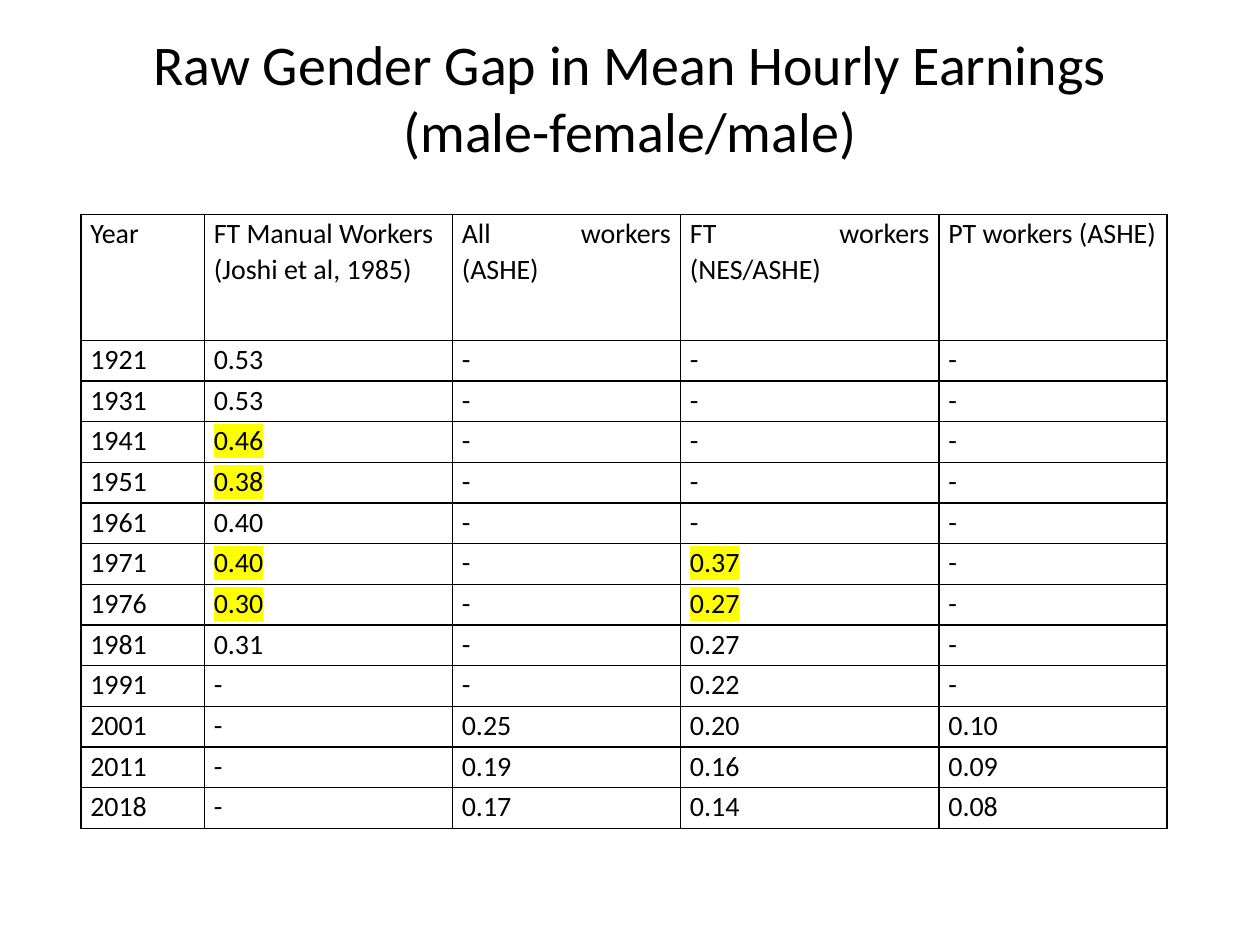
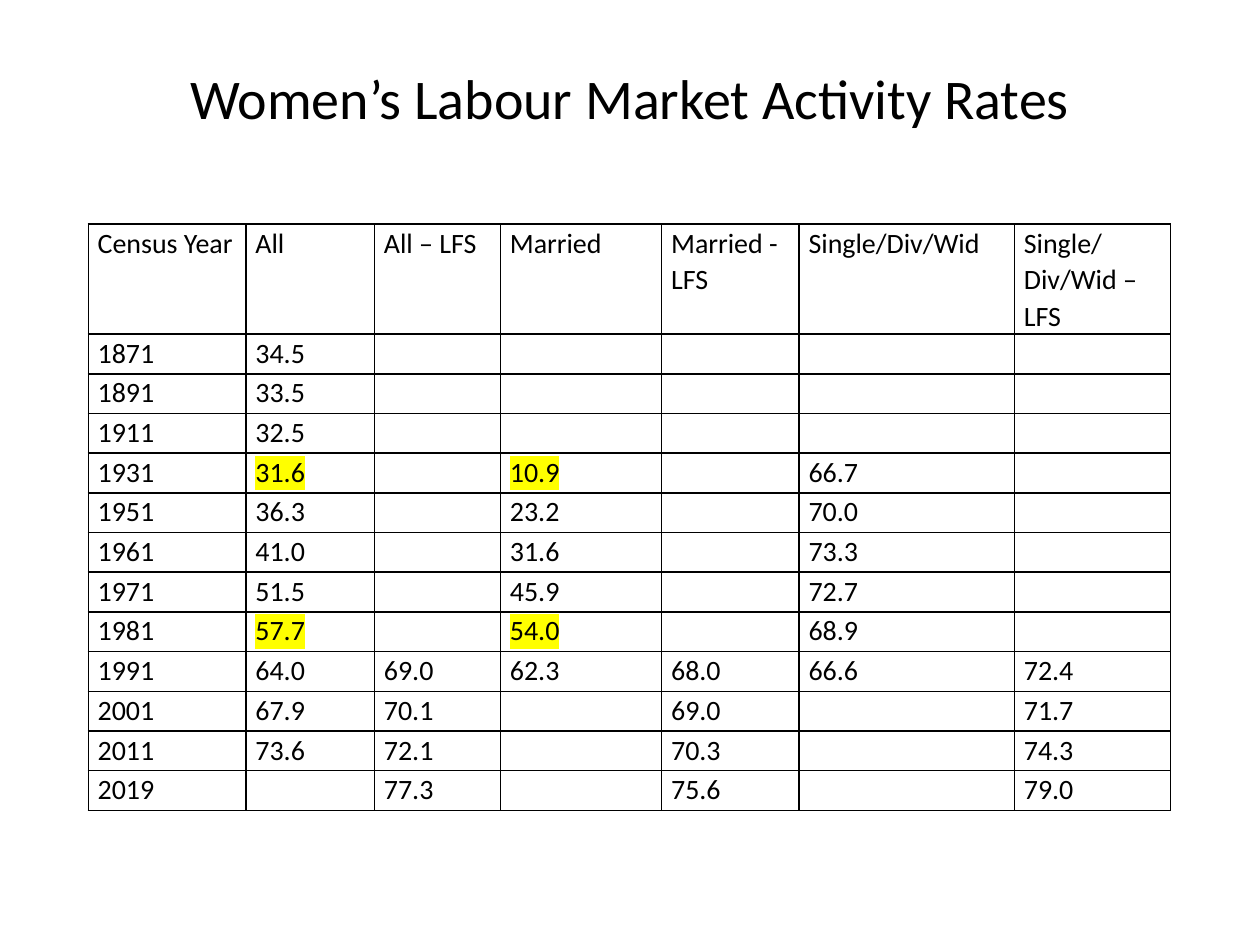
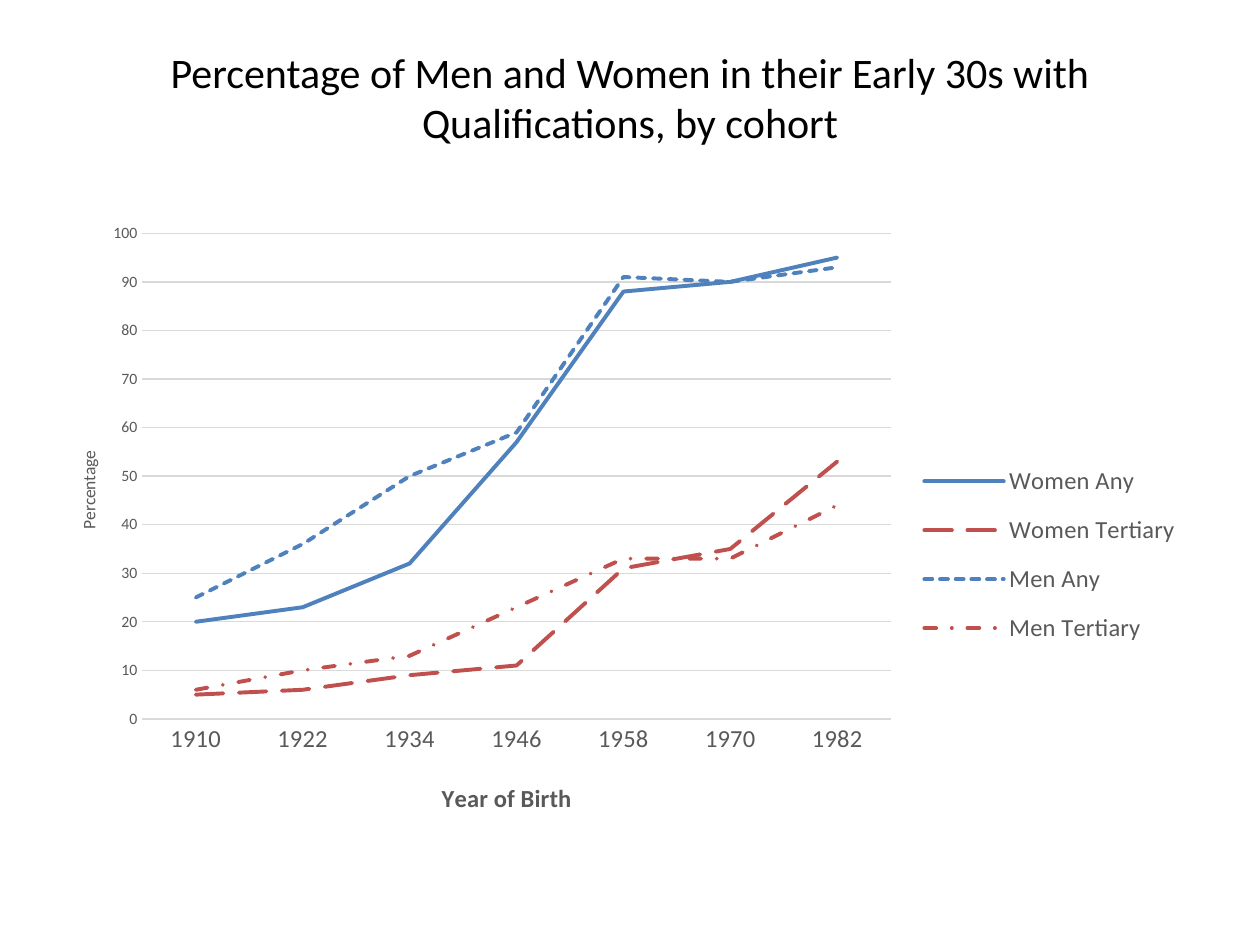
import lxml.etree
import pptx
import pptx.chart.data
import pptx.dml.color
import pptx.enum.chart
import pptx.enum.dml
import pptx.enum.text
import pptx.oxml.ns
import pptx.util

Cm = pptx.util.Cm
Pt = pptx.util.Pt
qn = pptx.oxml.ns.qn
ALIGN = pptx.enum.text.PP_ALIGN
DASH = pptx.enum.dml.MSO_LINE

FONT = "Calibri"
COLOURS = {
    "text": "000000",
    "border": "000000",
    "highlight": "FFFF00",
    "chart text": "595959",
    "grid": "D9D9D9",
    "any": "4F81BD",
    "tertiary": "C0504D",
}
TITLE_BOX = (1.27, 0.53, 22.86, 2.84)

EARNINGS_GAP = [
    ["Year", "FT Manual Workers\n(Joshi et al, 1985)", "All workers\v(ASHE)",
     "FT workers (NES/ASHE)", "PT workers (ASHE)"],
    ["1921", "0.53", "-", "-", "-"],
    ["1931", "0.53", "-", "-", "-"],
    ["1941", "0.46", "-", "-", "-"],
    ["1951", "0.38", "-", "-", "-"],
    ["1961", "0.40", "-", "-", "-"],
    ["1971", "0.40", "-", "0.37", "-"],
    ["1976", "0.30", "-", "0.27", "-"],
    ["1981", "0.31", "-", "0.27", "-"],
    ["1991", "-", "-", "0.22", "-"],
    ["2001", "-", "0.25", "0.20", "0.10"],
    ["2011", "-", "0.19", "0.16", "0.09"],
    ["2018", "-", "0.17", "0.14", "0.08"],
]
# Highlighted cells are given as (year, column)
EARNINGS_HIGHLIGHTS = {("1941", 1), ("1951", 1), ("1971", 1), ("1976", 1),
                       ("1971", 3), ("1976", 3)}

ACTIVITY_RATES = [
    ["Census Year", "All", "All – LFS", "Married", "Married - LFS",
     "Single/Div/Wid", "Single/Div/Wid – LFS"],
    ["1871", "34.5", "", "", "", "", ""],
    ["1891", "33.5", "", "", "", "", ""],
    ["1911", "32.5", "", "", "", "", ""],
    ["1931", "31.6", "", "10.9", "", "66.7", ""],
    ["1951", "36.3", "", "23.2", "", "70.0", ""],
    ["1961", "41.0", "", "31.6", "", "73.3", ""],
    ["1971", "51.5", "", "45.9", "", "72.7", ""],
    ["1981", "57.7", "", "54.0", "", "68.9", ""],
    ["1991", "64.0", "69.0", "62.3", "68.0", "66.6", "72.4"],
    ["2001", "67.9", "70.1", "", "69.0", "", "71.7"],
    ["2011", "73.6", "72.1", "", "70.3", "", "74.3"],
    ["2019", "", "77.3", "", "75.6", "", "79.0"],
]
ACTIVITY_HIGHLIGHTS = {("1931", 1), ("1931", 3), ("1981", 1), ("1981", 3)}

BIRTH_YEARS = ["1910", "1922", "1934", "1946", "1958", "1970", "1982"]
QUALIFICATIONS = [
    ("Women Any", [20, 23, 32, 57, 88, 90, 95], "any", DASH.SOLID),
    ("Women Tertiary", [5, 6, 9, 11, 31, 35, 53], "tertiary", DASH.LONG_DASH),
    ("Men Any", [25, 36, 50, 59, 91, 90, 93], "any", DASH.SQUARE_DOT),
    ("Men Tertiary", [6, 10, 13, 23, 33, 33, 44], "tertiary", DASH.DASH_DOT),
]


def colour(key):
    return pptx.dml.color.RGBColor.from_string(COLOURS[key])


def style_font(font, size, key="text", bold=False):
    font.name = FONT
    font.size = Pt(size)
    font.bold = bold
    font.color.rgb = colour(key)


def add_run(paragraph, text, size, key="text", bold=False):
    run = paragraph.add_run()
    run.text = text
    style_font(run.font, size, key, bold)
    return run


def add_titled_slide(deck, heading, size):
    slide = deck.slides.add_slide(deck.slide_layouts[5])
    title = slide.shapes.title
    title.left, title.top, title.width, title.height = map(Cm, TITLE_BOX)
    title.text_frame.vertical_anchor = pptx.enum.text.MSO_ANCHOR.MIDDLE
    paragraph = title.text_frame.paragraphs[0]
    paragraph.alignment = ALIGN.CENTER
    add_run(paragraph, heading, size)
    return slide


# Tables
def highlight(run):
    fill = run.font._element.find(qn("a:solidFill"))
    mark = lxml.etree.Element(qn("a:highlight"))
    lxml.etree.SubElement(mark, qn("a:srgbClr"), val=COLOURS["highlight"])
    fill.addnext(mark)


def frame_cell(cell):
    properties = cell._tc.get_or_add_tcPr()
    for side in ("a:lnL", "a:lnR", "a:lnT", "a:lnB"):
        line = lxml.etree.SubElement(properties, qn(side), w=str(Pt(1)))
        fill = lxml.etree.SubElement(line, qn("a:solidFill"))
        lxml.etree.SubElement(fill, qn("a:srgbClr"), val=COLOURS["border"])
    cell.fill.background()
    cell.margin_left = cell.margin_right = Cm(0.19)
    cell.margin_top = cell.margin_bottom = 0


def write_cell(cell, text, align, marked):
    for index, block in enumerate(text.split("\n")):
        frame = cell.text_frame
        paragraph = frame.add_paragraph() if index else frame.paragraphs[0]
        paragraph.alignment = align
        paragraph.line_spacing = 1.07
        for position, line in enumerate(block.split("\v")):
            if position:
                paragraph.add_line_break()
            run = add_run(paragraph, line, 16)
            if marked:
                highlight(run)


def add_data_table(slide, left, top, widths, header_height, row_height,
                   rows, highlights, align):
    heights = [header_height] + [row_height] * (len(rows) - 1)
    table = slide.shapes.add_table(
        len(rows), len(widths), Cm(left), Cm(top),
        Cm(sum(widths)), Cm(sum(heights))).table
    table.first_row = table.horz_banding = False
    for column, width in zip(table.columns, widths):
        column.width = Cm(width)
    for row, height, values in zip(table.rows, heights, rows):
        row.height = Cm(height)
        for index, (cell, text) in enumerate(zip(row.cells, values)):
            frame_cell(cell)
            if text:
                write_cell(cell, text, align, (values[0], index) in highlights)


# Chart
def place(element, x, y, w=None, h=None, inner=False):
    """Set the place of a chart part as fractions of the chart."""
    layout = element.find(qn("c:layout"))
    if layout is None:
        layout = lxml.etree.Element(qn("c:layout"))
        overlay = element.find(qn("c:overlay"))
        if overlay is None:
            element.insert(0, layout)
        else:
            overlay.addprevious(layout)
    for child in list(layout):
        layout.remove(child)
    manual = lxml.etree.SubElement(layout, qn("c:manualLayout"))
    settings = [("layoutTarget", "inner" if inner else None),
                ("xMode", "edge"), ("yMode", "edge"),
                ("x", x), ("y", y), ("w", w), ("h", h)]
    for tag, value in settings:
        if value is not None:
            lxml.etree.SubElement(manual, qn("c:" + tag), val=str(value))


def style_axis(axis, label_size, name, name_size, bold, x, y):
    axis.major_tick_mark = axis.minor_tick_mark = pptx.enum.chart.XL_TICK_MARK.NONE
    style_font(axis.tick_labels.font, label_size, "chart text")
    frame = axis.axis_title.text_frame
    add_run(frame.paragraphs[0], name, name_size, "chart text", bold)
    place(axis.axis_title._element, x, y)
    return frame


def style_line(line, key, width):
    line.color.rgb = colour(key)
    line.width = Pt(width)


def add_qualifications_chart(slide, left, top, width, height):
    data = pptx.chart.data.CategoryChartData()
    data.categories = BIRTH_YEARS
    for name, values, _, _ in QUALIFICATIONS:
        data.add_series(name, values)
    chart = slide.shapes.add_chart(
        pptx.enum.chart.XL_CHART_TYPE.LINE,
        Cm(left), Cm(top), Cm(width), Cm(height), data).chart
    chart.has_title = False
    style_font(chart.font, 10)
    plot = chart.plots[0]
    plot.vary_by_categories = False
    place(chart._chartSpace.chart.plotArea, 0.07, 0.11, 0.66, 0.68, inner=True)

    # Lines
    for series, (_, _, key, dash) in zip(plot.series, QUALIFICATIONS):
        series.smooth = False
        line = series.format.line
        style_line(line, key, 2.25)
        line.dash_style = dash
        line._get_or_add_ln().set("cap", "rnd")

    # Axes
    years, percentage = chart.category_axis, chart.value_axis
    style_axis(years, 14, "Year of Birth", 14, True, 0.33, 0.87)
    style_line(years.format.line, "grid", 0.75)
    frame = style_axis(percentage, 9, "Percentage", 10, False, 0.01, 0.41)
    frame._element.find(qn("a:bodyPr")).set("rot", "-5400000")
    percentage.minimum_scale, percentage.maximum_scale = 0, 100
    percentage.major_unit = 10
    percentage.format.line.fill.background()
    percentage.has_major_gridlines = True
    style_line(percentage.major_gridlines.format.line, "grid", 0.75)

    # Legend
    chart.has_legend = True
    chart.legend.position = pptx.enum.chart.XL_LEGEND_POSITION.RIGHT
    chart.legend.include_in_layout = False
    style_font(chart.legend.font, 14, "chart text")
    place(chart.legend._element, 0.75, 0.41, 0.24, 0.3)


def main():
    deck = pptx.Presentation()
    deck.slide_width, deck.slide_height = Cm(25.4), Cm(19.05)

    earnings = add_titled_slide(
        deck, "Raw Gender Gap in Mean Hourly Earnings (male-female/male)", 32)
    add_data_table(earnings, 1.63, 4.32, [2.49, 5, 4.6, 5.21, 4.6], 2.54, 0.82,
                   EARNINGS_GAP, EARNINGS_HIGHLIGHTS, ALIGN.JUSTIFY)

    activity = add_titled_slide(deck, "Women’s Labour Market Activity Rates", 32)
    add_data_table(activity, 1.78, 4.52,
                   [3.18, 2.59, 2.54, 3.25, 2.77, 4.34, 3.15], 1.63, 0.8,
                   ACTIVITY_RATES, ACTIVITY_HIGHLIGHTS, ALIGN.LEFT)

    cohorts = add_titled_slide(
        deck, "Percentage of Men and Women in their Early 30s with "
        "Qualifications, by cohort", 24)
    add_qualifications_chart(cohorts, 1.27, 3.12, 22.86, 14.4)

    deck.save("out.pptx")


if __name__ == "__main__":
    main()
